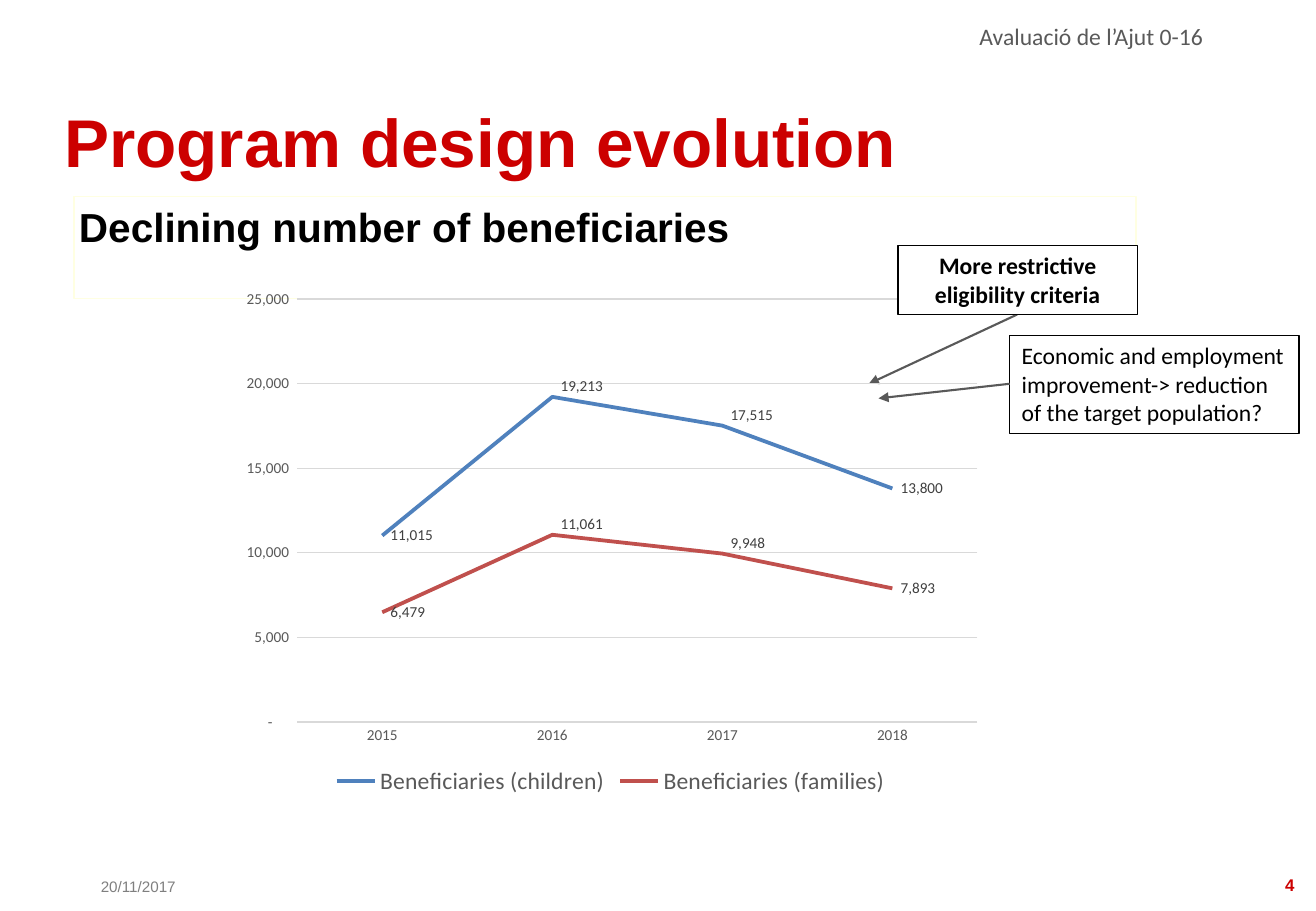
from lxml import etree
from pptx import Presentation
from pptx.chart.data import CategoryChartData
from pptx.dml.color import RGBColor
from pptx.enum.chart import XL_CHART_TYPE, XL_LABEL_POSITION, XL_LEGEND_POSITION, XL_MARKER_STYLE, XL_TICK_MARK
from pptx.enum.shapes import MSO_CONNECTOR, MSO_SHAPE
from pptx.enum.text import MSO_ANCHOR, PP_ALIGN
from pptx.oxml.ns import qn
from pptx.util import Inches, Pt

RED = RGBColor(0xCC, 0x00, 0x00)
BLACK = RGBColor(0x00, 0x00, 0x00)
WHITE = RGBColor(0xFF, 0xFF, 0xFF)
CREAM = RGBColor(0xFF, 0xFF, 0xE2)
DARK_GREY = RGBColor(0x59, 0x59, 0x59)
LABEL_GREY = RGBColor(0x40, 0x40, 0x40)
MID_GREY = RGBColor(0x7F, 0x7F, 0x7F)
GRID_GREY = RGBColor(0xD9, 0xD9, 0xD9)
CHILDREN_BLUE = RGBColor(0x4F, 0x81, 0xBD)
FAMILIES_RED = RGBColor(0xC0, 0x50, 0x4D)

LINE_CHART = XL_CHART_TYPE.LINE
LABEL_RIGHT = XL_LABEL_POSITION.RIGHT
LEGEND_BOTTOM = XL_LEGEND_POSITION.BOTTOM
NO_MARKER = XL_MARKER_STYLE.NONE
NO_TICK = XL_TICK_MARK.NONE
STRAIGHT = MSO_CONNECTOR.STRAIGHT
RECTANGLE = MSO_SHAPE.RECTANGLE
TOP, MIDDLE, BOTTOM = MSO_ANCHOR.TOP, MSO_ANCHOR.MIDDLE, MSO_ANCHOR.BOTTOM
LEFT, CENTER, RIGHT = PP_ALIGN.LEFT, PP_ALIGN.CENTER, PP_ALIGN.RIGHT

HEADING, BODY = "Arial", "Calibri"
DEFAULT_INSETS = (7.2, 3.6, 7.2, 3.6)
FLUSH_LEFT = (0, 3.6, 7.2, 3.6)
COUNT_FORMAT = '_-* #,##0_-;\\-* #,##0_-;_-* "-"??_-;_-@_'


class SlideBuilder:
    """Draws styled elements on one slide, placed in percent of its size."""

    def __init__(self, deck):
        self.width, self.height = deck.slide_width, deck.slide_height
        self.shapes = deck.slides.add_slide(deck.slide_layouts[6]).shapes

    def place(self, *shares):
        sizes = (self.width, self.height) * (len(shares) // 2)
        return [round(size * share / 100) for size, share in zip(sizes, shares)]

    def font(self, font, size, color, face=BODY, bold=False):
        font.size, font.name, font.bold = Pt(size), face, bold
        font.color.rgb = color

    def wording(self, holder, text, size, color, face=BODY, bold=False, align=LEFT,
                anchor=TOP, insets=DEFAULT_INSETS, wrap=True, spacing=None):
        frame = holder.text_frame
        frame.word_wrap, frame.vertical_anchor = wrap, anchor
        (frame.margin_left, frame.margin_top,
         frame.margin_right, frame.margin_bottom) = map(Pt, insets)
        paragraph = frame.paragraphs[0]
        paragraph.text, paragraph.alignment = text, align
        paragraph.line_spacing = spacing
        self.font(paragraph.font, size, color, face, bold)

    def text(self, area, text, size, color, **style):
        self.wording(self.shapes.add_textbox(*self.place(*area)), text, size, color, **style)

    def panel(self, area, outline, text, size, color, **style):
        panel = self.shapes.add_shape(RECTANGLE, *self.place(*area))
        panel.shadow.inherit = False
        panel.fill.solid()
        panel.fill.fore_color.rgb = WHITE
        panel.line.color.rgb = outline
        panel.line.width = Pt(0.75)
        self.wording(panel, text, size, color, **style)

    def arrow(self, start, end):
        arrow = self.shapes.add_connector(STRAIGHT, *self.place(*start, *end))
        arrow.line.color.rgb = DARK_GREY
        arrow.line.width = Pt(1.25)
        properties = arrow._element.spPr
        etree.SubElement(properties.get_or_add_ln(), qn("a:tailEnd"), type="triangle")
        etree.SubElement(properties, qn("a:effectLst"))

    def layout(self, **settings):
        layout = etree.Element(qn("c:layout"))
        manual = etree.SubElement(layout, qn("c:manualLayout"))
        for tag, value in settings.items():
            etree.SubElement(manual, qn("c:" + tag), val=str(value))
        return layout

    def line_chart(self, area, categories, lines, top, step):
        data = CategoryChartData(number_format=COUNT_FORMAT)
        data.categories = categories
        for name, values, _, _ in lines:
            data.add_series(name, values)
        chart = self.shapes.add_chart(LINE_CHART, *self.place(*area), data).chart
        chart.has_title = False
        self.font(chart.font, 10, BLACK)
        chart.has_legend = True
        chart.legend.position = LEGEND_BOTTOM
        chart.legend.include_in_layout = False
        self.font(chart.legend.font, 14, DARK_GREY)
        self.axes(chart, top, step)
        chart.plots[0].vary_by_categories = False
        for series, (_, _, color, shifts) in zip(chart.plots[0].series, lines):
            self.series(series, color, shifts)
        plot_area = chart._chartSpace.chart.plotArea
        for existing in plot_area.findall(qn("c:layout")):
            plot_area.remove(existing)
        plot_area.insert(0, self.layout(layoutTarget="inner", xMode="edge", yMode="edge",
                                        x=0.09, y=0.04, w=0.89, h=0.81))

    def axes(self, chart, top, step):
        for axis in (chart.category_axis, chart.value_axis):
            axis.major_tick_mark = axis.minor_tick_mark = NO_TICK
            self.font(axis.tick_labels.font, 9, DARK_GREY)
        counts = chart.value_axis
        counts.minimum_scale, counts.maximum_scale, counts.major_unit = 0, top, step
        counts.tick_labels.number_format = COUNT_FORMAT
        counts.tick_labels.number_format_is_linked = False
        counts.format.line.fill.background()
        for rule in (chart.category_axis.format.line, counts.major_gridlines.format.line):
            rule.color.rgb = GRID_GREY
            rule.width = Pt(0.75)

    def series(self, series, color, shifts):
        series.smooth = False
        series.marker.style = NO_MARKER
        series.format.line.color.rgb = color
        series.format.line.width = Pt(2.25)
        labels = series.data_labels
        labels.show_value = True
        labels.position = LABEL_RIGHT
        self.font(labels.font, 9, LABEL_GREY)
        for point, (x, y) in shifts.items():
            label = series.points[point].data_label
            self.font(label.font, 9, LABEL_GREY)
            label.position = LABEL_RIGHT
            element = next(item for item in labels._element.findall(qn("c:dLbl"))
                           if item.find(qn("c:idx")).get("val") == str(point))
            element.insert(1, self.layout(x=x, y=y))


def main():
    deck = Presentation()
    deck.slide_width, deck.slide_height = Inches(10.83), Inches(7.5)
    slide = SlideBuilder(deck)
    slide.text((7.66, 95.73, 8.49, 3.2), "20/11/2017", 9, MID_GREY, face=HEADING,
               anchor=BOTTOM, insets=FLUSH_LEFT, wrap=False)
    slide.text((94.64, 95.6, 4.62, 3.33), "4", 10, RED, face=HEADING, bold=True,
               align=RIGHT, anchor=BOTTOM, insets=FLUSH_LEFT)
    slide.text((29.27, 3.33, 63.07, 2.8), "Avaluació de l’Ajut 0-16", 14, DARK_GREY,
               align=RIGHT, anchor=MIDDLE, spacing=0.3)
    slide.panel((5.63, 21.6, 80.7, 11.2), CREAM, "Declining number of beneficiaries",
                24, BLACK, face=HEADING, bold=True, insets=(2.9, 2.9, 2.9, 2.9))
    slide.panel((76.73, 36.8, 21.98, 10.8), BLACK,
                "Economic and employment improvement-> reduction of the target population?",
                14, BLACK)
    slide.arrow((77.29, 34.53), (66.02, 42.13))
    slide.arrow((76.73, 42.13), (66.76, 43.73))
    slide.panel((4.89, 10, 93.81, 10.8), WHITE, "Program design evolution", 40, RED,
                face=HEADING, bold=True, anchor=MIDDLE, insets=FLUSH_LEFT)
    label_shifts = {1: (0, -0.02), 2: (0, -0.02)}
    slide.line_chart(
        (17.36, 30.53, 58.08, 57.33), ["2015", "2016", "2017", "2018"],
        [("Beneficiaries (children)", (11015, 19213, 17515, 13800), CHILDREN_BLUE, label_shifts),
         ("Beneficiaries (families)", (6479, 11061, 9948, 7893), FAMILIES_RED, label_shifts)],
        top=25000, step=5000)
    slide.panel((68.24, 26.93, 18.19, 7.6), BLACK, "More restrictive eligibility criteria",
                14, BLACK, bold=True, align=CENTER)
    deck.save("out.pptx")


if __name__ == "__main__":
    main()
